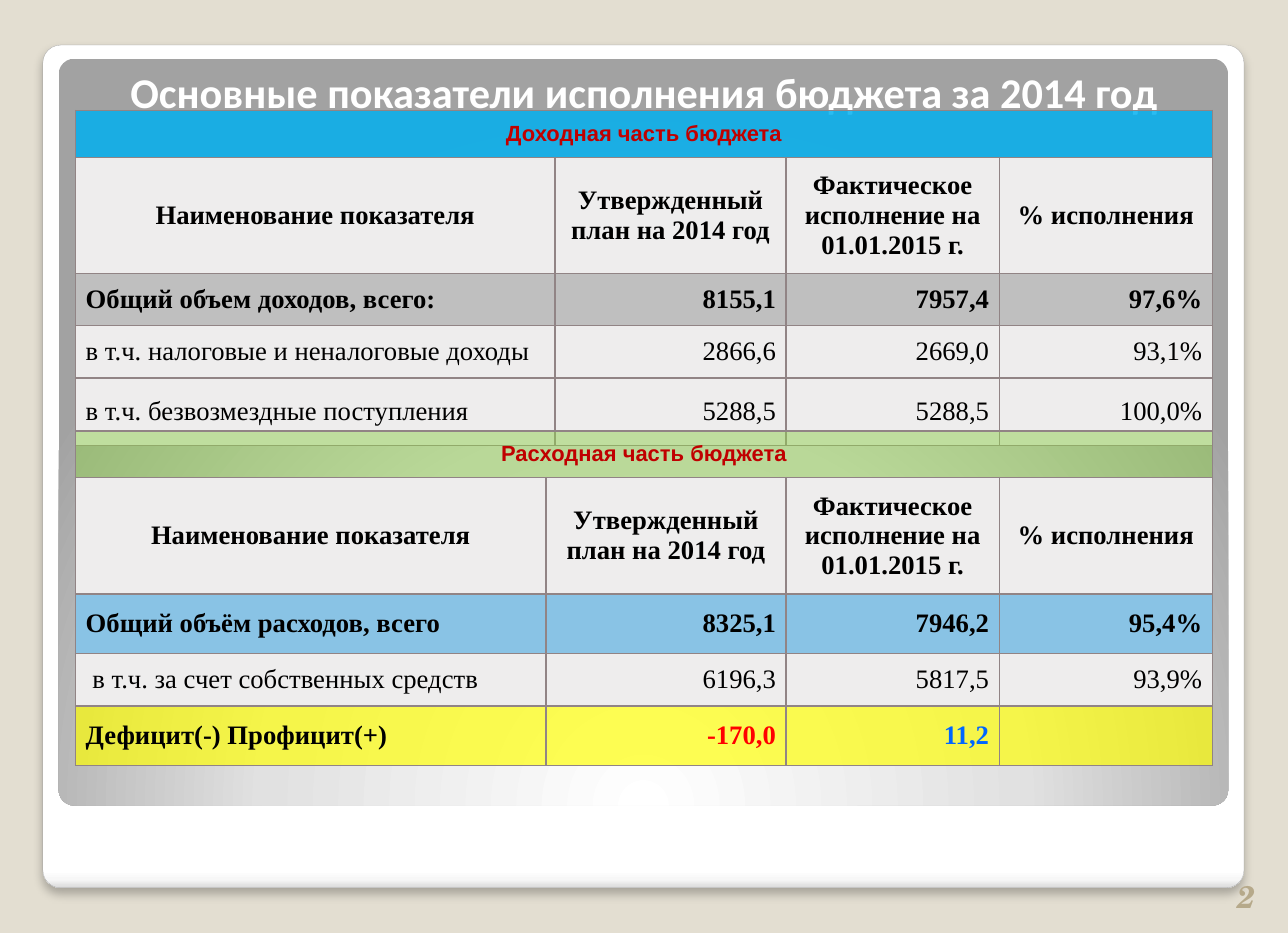
from pptx import Presentation
from pptx.dml.color import RGBColor
from pptx.enum.shapes import MSO_SHAPE
from pptx.enum.text import MSO_ANCHOR, PP_ALIGN
from pptx.oxml import parse_xml
from pptx.oxml.ns import nsdecls
from pptx.util import Inches, Pt

TITLE = "Основные показатели исполнения бюджета за 2014 год"
HEADS = ("Наименование показателя", "Утвержденный план на 2014 год",
         "Фактическое исполнение на 01.01.2015 г.", "% исполнения")
PALE, EDGE = "EEEDED", "918485"

# Each row: texts, fill, opacity in percent, bold
INCOME = {
    "name": "Доходная часть бюджета", "fill": ("00B0F0", 84), "top": 0.98,
    "cols": (4.25, 2.05, 1.89, 1.89), "heights": (0.39, 0.93, 0.38, 0.4, 0.6),
    "rows": [
        (("Общий объем доходов, всего:", "8155,1", "7957,4", "97,6%"), "BFBFBF", 100, True),
        (("в т.ч. налоговые и неналоговые доходы", "2866,6", "2669,0", "93,1%"), PALE, 100, False),
        (("в т.ч. безвозмездные поступления", "5288,5", "5288,5", "100,0%"), PALE, 100, False),
    ],
}
SPENDING = {
    "name": "Расходная часть бюджета", "fill": ("92D050", 50), "top": 3.82,
    "cols": (4.17, 2.13, 1.89, 1.89), "heights": (0.39, 0.93, 0.53, 0.4, 0.53),
    "rows": [
        (("Общий объём расходов, всего", "8325,1", "7946,2", "95,4%"), "89C3E5", 100, True),
        ((" в т.ч. за счет собственных средств", "6196,3", "5817,5", "93,9%"), PALE, 100, False),
        (("Дефицит(-) Профицит(+)", "-170,0", "11,2", ""), "FFFF00", 67, True),
    ],
}
ACCENTS = {"-170,0": "FF0000", "11,2": "0066FF"}

# Panels: box, gradient stops, gradient direction
PANELS = [
    ((0.38, 0.4, 10.65, 7.47),
     ((0, "FFFFFF"), (98, "FFFFFF"), (99, "F7F7F7"), (100, "DADADA")),
     '<a:lin ang="5400000" scaled="0"/>'),
    ((0.52, 0.52, 10.37, 6.62),
     ((0, "FFFFFF"), (55, "E1E1E1"), (100, "A2A2A2")),
     '<a:path path="circle"><a:fillToRect l="50000" t="175000" r="50000" b="-75000"/></a:path>'),
]


def color(code):
    return RGBColor.from_string(code)


def xml(tag, body, attrs=""):
    return parse_xml(f'<a:{tag} {nsdecls("a")} {attrs}>{body}</a:{tag}>')


def write(par, text, size, face, code, bold=False, align=PP_ALIGN.LEFT):
    par.text = text
    par.alignment = align
    font = par.font
    font.size, font.name, font.bold = Pt(size), face, bold
    font.color.rgb = color(code)


def add_panel(slide, box, stops, way):
    panel = slide.shapes.add_shape(MSO_SHAPE.ROUNDED_RECTANGLE, *map(Inches, box))
    panel.adjustments[0] = 0.021
    marks = "".join(f'<a:gs pos="{pos * 1000}"><a:srgbClr val="{code}"/></a:gs>'
                    for pos, code in stops)
    panel._element.spPr.insert(2, xml("gradFill", f"<a:gsLst>{marks}</a:gsLst>{way}"))
    panel.line.fill.background()
    panel.shadow.inherit = False
    return panel


def style_cell(cell, fill, alpha):
    """Set the fill, borders and margins of a table cell."""
    cell.fill.solid()
    cell.fill.fore_color.rgb = color(fill)
    props = cell._tc.get_or_add_tcPr()
    if alpha < 100:
        props.find(".//{*}srgbClr").append(xml("alpha", "", f'val="{alpha * 1000}"'))
    for i, side in enumerate("LRTB"):
        paint = f'<a:solidFill><a:srgbClr val="{EDGE}"/></a:solidFill>'
        props.insert(i, xml("ln" + side, paint, 'w="12700"'))
    cell.vertical_anchor = MSO_ANCHOR.MIDDLE
    cell.margin_left = cell.margin_right = Inches(0.09)
    cell.margin_top = cell.margin_bottom = Inches(0.09)


def add_budget(slide, part):
    rows = [((part["name"], "", "", ""), *part["fill"], True),
            (HEADS, PALE, 100, True), *part["rows"]]
    cols, heights = part["cols"], part["heights"]
    table = slide.shapes.add_table(
        len(rows), len(cols), Inches(0.67), Inches(part["top"]),
        Inches(sum(cols)), Inches(sum(heights))).table
    table.first_row = table.horz_banding = False
    for col, width in zip(table.columns, cols):
        col.width = Inches(width)
    for r, (texts, fill, alpha, bold) in enumerate(rows):
        table.rows[r].height = Inches(heights[r])
        for c, text in enumerate(texts):
            cell = table.cell(r, c)
            style_cell(cell, fill, alpha)
            align = (PP_ALIGN.CENTER if r < 2 else
                     PP_ALIGN.RIGHT if c else PP_ALIGN.LEFT)
            look = ((14, "Arial", "C00000") if r == 0 else
                    (17, "Times New Roman", ACCENTS.get(text, "000000")))
            write(cell.text_frame.paragraphs[0], text, *look, bold, align)
    table.cell(0, 0).merge(table.cell(0, len(cols) - 1))


def main():
    deck = Presentation()
    deck.slide_width, deck.slide_height = Inches(11.42), Inches(8.27)
    slide = deck.slides.add_slide(deck.slide_layouts[5])
    slide.background.fill.solid()
    slide.background.fill.fore_color.rgb = color("E3DED1")

    card, _ = [add_panel(slide, *panel) for panel in PANELS]
    card.line.color.rgb = color("A4A4A4")
    card.line.width = Pt(0.16)
    shade = '<a:srgbClr val="000000"><a:alpha val="25000"/></a:srgbClr>'
    card._element.spPr.find("{*}effectLst").append(
        xml("outerShdw", shade, 'blurRad="76200" dist="50800" dir="5400000"'))

    title = slide.shapes.title
    title.left, title.top = Inches(0), Inches(0.59)
    title.width, title.height = Inches(11.42), Inches(0.44)
    title.text_frame.vertical_anchor = MSO_ANCHOR.MIDDLE
    write(title.text_frame.paragraphs[0], TITLE, 27, "Calibri", "FFFFFF", True, PP_ALIGN.CENTER)
    slide.shapes._spTree.append(title._element)  # in front of the panels

    number = slide.shapes.add_textbox(*map(Inches, (10.66, 7.72, 0.57, 0.44))).text_frame
    number.word_wrap = True
    number.vertical_anchor = MSO_ANCHOR.BOTTOM
    write(number.paragraphs[0], "2", 20, "TeX Gyre Schola", "B6A98A", True, PP_ALIGN.RIGHT)
    number.paragraphs[0].font.italic = True

    for part in (INCOME, SPENDING):
        add_budget(slide, part)
    deck.save("out.pptx")


if __name__ == "__main__":
    main()
